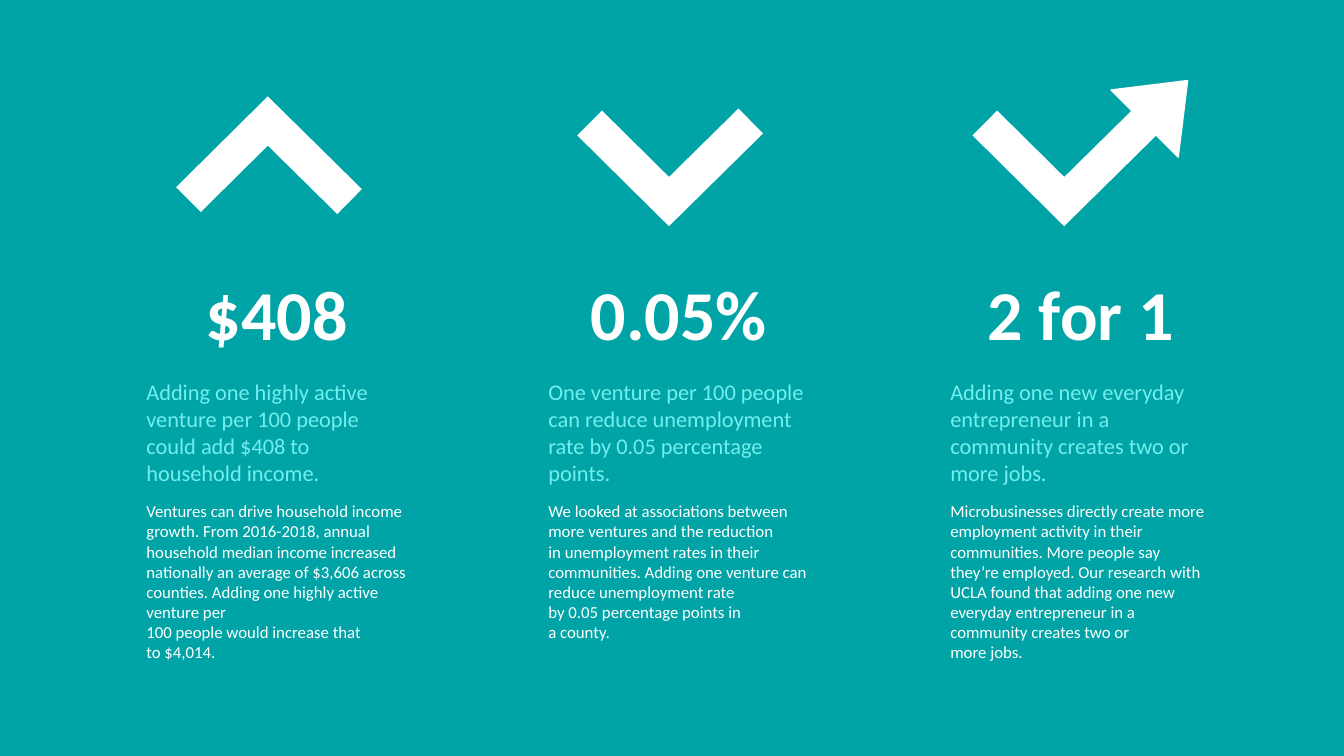
import pptx
import pptx.util
import pptx.dml.color
import pptx.enum.shapes
import pptx.enum.text
import pptx.oxml.ns
from lxml import etree

Cm = pptx.util.Cm
Pt = pptx.util.Pt
COLORS = {"background": "00A4A6", "white": "FFFFFF", "accent": "72EEEE"}
FONT = "Calibri"

# Headline number, claim and explanation of each column
COLUMNS = [
    ("$408",
     "Adding one highly active venture per 100 people could add $408 to household income.",
     "Ventures can drive household income growth. From 2016-2018, annual household median "
     "income increased nationally an average of $3,606 across counties. Adding one highly "
     "active venture per \v100 people would increase that \vto $4,014."),
    ("0.05%",
     "One venture per 100 people can reduce unemployment rate by 0.05 percentage points.",
     "We looked at associations between more ventures and the reduction \vin unemployment "
     "rates in their communities. Adding one venture can reduce unemployment rate \vby 0.05 "
     "percentage points in \va county."),
    ("2 for 1",
     "Adding one new everyday entrepreneur in a community creates two or more jobs.",
     "Microbusinesses directly create more employment activity in their communities. More "
     "people say they’re employed. Our research with UCLA found that adding one new everyday "
     "entrepreneur in a community creates two or \vmore jobs."),
]
COLUMN_LEFT, COLUMN_PITCH, COLUMN_WIDTH = 3.61, 10.13, 6.74

# Heights of the left end, tip and right end of a chevron
CHEVRON_UP = (5.03, 3.05, 5.08)
CHEVRON_DOWN = (3.1, 5.08, 3.05)


def color(name):
    return pptx.dml.color.RGBColor.from_string(COLORS[name])


def style_paragraph(paragraph, text, size, color_name, bold=False, space_before=0):
    paragraph.text = text
    paragraph.space_before = Pt(space_before)
    paragraph.font.name = FONT
    paragraph.font.size = Pt(size)
    paragraph.font.bold = bold
    paragraph.font.color.rgb = color(color_name)


def add_column(slide, left, number, claim, explanation):
    shape = slide.shapes.add_textbox(Cm(left), Cm(6.73), Cm(COLUMN_WIDTH), Cm(9.98))
    frame = shape.text_frame
    frame.word_wrap = True
    frame.margin_left = frame.margin_right = Cm(0.08)
    frame.margin_top = frame.margin_bottom = Cm(0.08)
    headline = frame.paragraphs[0]
    style_paragraph(headline, number, 50, "white", bold=True)
    headline.alignment = pptx.enum.text.PP_ALIGN.CENTER
    style_paragraph(frame.add_paragraph(), claim, 16, "accent", space_before=17)
    style_paragraph(frame.add_paragraph(), explanation, 12, "white", space_before=11)


def add_chevron(slide, left, heights):
    points = [(Cm(left + offset), Cm(top)) for offset, top in zip((0, 2, 4.06), heights)]
    builder = slide.shapes.build_freeform(*points[0])
    builder.add_line_segments(points[1:], close=False)
    shape = builder.convert_to_shape()
    shape.shadow.inherit = False
    shape.fill.background()
    shape.line.color.rgb = color("white")
    shape.line.width = Pt(25)
    # Sharp corner at the tip
    line = shape.line._get_or_add_ln()
    etree.SubElement(line, pptx.oxml.ns.qn("a:miter"), lim="800000")


def add_arrowhead(slide):
    shape = slide.shapes.add_shape(
        pptx.enum.shapes.MSO_SHAPE.RIGHT_ARROW, Cm(27.89), Cm(1.68), Cm(2.39), Cm(2.39))
    shape.adjustments[0] = 0.32
    shape.adjustments[1] = 0.64
    shape.rotation = 315
    shape.shadow.inherit = False
    shape.fill.solid()
    shape.fill.fore_color.rgb = color("white")
    shape.line.color.rgb = color("white")
    shape.line.width = Pt(1)


def main():
    presentation = pptx.Presentation()
    presentation.slide_width = Cm(33.87)
    presentation.slide_height = Cm(19.05)
    slide = presentation.slides.add_slide(presentation.slide_layouts[6])
    slide.background.fill.solid()
    slide.background.fill.fore_color.rgb = color("background")

    # Text columns
    for index, texts in enumerate(COLUMNS):
        add_column(slide, COLUMN_LEFT + index * COLUMN_PITCH, *texts)

    # Trend symbols
    add_chevron(slide, 4.75, CHEVRON_UP)
    add_chevron(slide, 14.86, CHEVRON_DOWN)
    add_chevron(slide, 24.82, CHEVRON_DOWN)
    add_arrowhead(slide)

    presentation.save("out.pptx")


if __name__ == "__main__":
    main()
